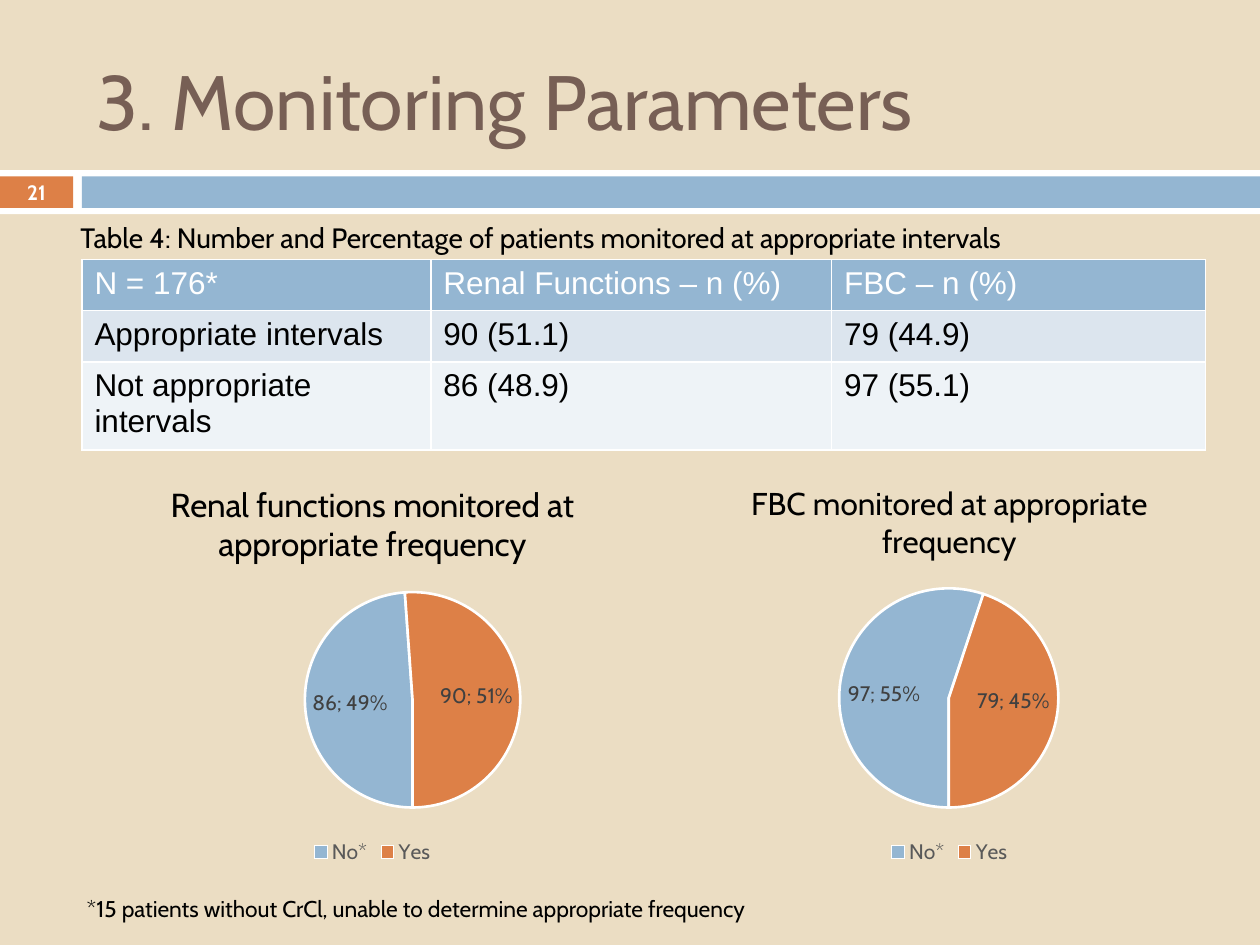
import pptx
import pptx.chart.data
import pptx.dml.color
import pptx.enum.chart
import pptx.enum.shapes
import pptx.enum.text
import pptx.oxml
import pptx.oxml.ns
import pptx.util
from lxml import etree

Inches = pptx.util.Inches
Pt = pptx.util.Pt
Align = pptx.enum.text.PP_ALIGN
Anchor = pptx.enum.text.MSO_ANCHOR
qn = pptx.oxml.ns.qn

BLUE, RUST, WHITE, BLACK = "94B6D2", "DD8047", "FFFFFF", "000000"


def tint(code):
    return pptx.dml.color.RGBColor.from_string(code)


def paint(fill, code):
    fill.solid()
    fill.fore_color.rgb = tint(code)


class Deck:
    """Holds the style and the current slide, and draws each kind of element."""

    face = "Cabin"

    def __init__(self, slide):
        self.slide = slide

    def font(self, font, size, code, face=None, bold=False):
        font.name = face or self.face
        font.size = Pt(size)
        font.bold = bold
        font.color.rgb = tint(code)

    def bar(self, box, code):
        kind = pptx.enum.shapes.MSO_SHAPE.RECTANGLE
        shape = self.slide.shapes.add_shape(kind, *map(Inches, box))
        shape.shadow.inherit = False
        paint(shape.fill, code)
        shape.line.fill.background()

    def text(self, box, words, size, code=BLACK, bold=False,
             align=Align.LEFT, anchor=Anchor.TOP):
        frame = self.slide.shapes.add_textbox(*map(Inches, box)).text_frame
        frame.word_wrap = True
        frame.vertical_anchor = anchor
        para = frame.paragraphs[0]
        para.text = words
        para.alignment = align
        self.font(para.font, size, code, bold=bold)

    def edge(self, cell, widths):
        props = cell._tc.get_or_add_tcPr()
        for spot, (side, width) in enumerate(widths.items()):
            line = etree.Element(qn("a:ln" + side), w=str(Pt(width)))
            fill = etree.SubElement(line, qn("a:solidFill"))
            etree.SubElement(fill, qn("a:srgbClr"), val=WHITE)
            props.insert(spot, line)

    def table(self, box, rows, cols, fills):
        shape = self.slide.shapes.add_table(len(rows), len(cols), *map(Inches, box))
        grid = shape.table
        for col, width in zip(grid.columns, cols):
            col.width = Inches(width)
        for r, row in enumerate(rows):
            for c, words in enumerate(row):
                cell = grid.cell(r, c)
                cell.text = words
                paint(cell.fill, fills[r])
                self.font(cell.text_frame.paragraphs[0].font, 18,
                          BLACK if r else WHITE, "Arial")
                self.edge(cell, {"L": 1, "R": 1, "T": 1, "B": 1})

    def pie(self, box, title, size, values, disc):
        data = pptx.chart.data.CategoryChartData()
        data.categories = ["No*", "Yes"]
        data.add_series(title, values)
        kind = pptx.enum.chart.XL_CHART_TYPE.PIE
        chart = self.slide.shapes.add_chart(kind, *map(Inches, box), data).chart
        self.font(chart.font, 10, BLACK)
        chart.has_title = True
        para = chart.chart_title.text_frame.paragraphs[0]
        para.text = title
        self.font(para.font, size, BLACK)
        chart.has_legend = True
        chart.legend.position = pptx.enum.chart.XL_LEGEND_POSITION.BOTTOM
        chart.legend.include_in_layout = False
        self.font(chart.legend.font, 12, "595959")

        plot = chart.plots[0]
        plot.has_data_labels = True
        labels = plot.data_labels
        labels.show_value = labels.show_percentage = True
        labels.position = pptx.enum.chart.XL_LABEL_POSITION.INSIDE_END
        self.font(labels.font, 12, "404040")
        mark = etree.Element(qn("c:separator"))
        mark.text = "; "
        last = labels._element.find(qn("c:showBubbleSize"))
        if last is None:
            last = labels._element.find(qn("c:showPercent"))
        last.addnext(mark)
        for spot, code in enumerate((BLUE, RUST)):
            style = plot.series[0].points[spot].format
            paint(style.fill, code)
            style.line.color.rgb = tint(WHITE)
            style.line.width = Pt(1.5)
        for old in plot._element.findall(qn("c:firstSliceAng")):
            plot._element.remove(old)
        etree.SubElement(plot._element, qn("c:firstSliceAng"), val="180")
        self.place(chart, box, disc)

    def place(self, chart, box, disc):
        area = chart._chartSpace.chart.plotArea
        for old in area.findall(qn("c:layout")):
            area.remove(old)
        layout = etree.Element(qn("c:layout"))
        area.insert(0, layout)
        manual = etree.SubElement(layout, qn("c:manualLayout"))
        left, top, width, height = box
        x, y, side = disc
        parts = {"layoutTarget": "inner", "xMode": "edge", "yMode": "edge",
                 "x": (x - left) / width, "y": (y - top) / height,
                 "w": side / width, "h": side / height}
        for name, value in parts.items():
            etree.SubElement(manual, qn("c:" + name), val=str(value))


def main():
    show = pptx.Presentation()
    show.slide_width, show.slide_height = Inches(10), Inches(7.5)
    slide = show.slides.add_slide(show.slide_layouts[6])
    paint(slide.background.fill, "EBDDC3")
    deck = Deck(slide)

    deck.bar((0, 1.35, 10, 0.35), WHITE)
    deck.bar((0, 1.4, 0.58, 0.25), RUST)
    deck.bar((0.65, 1.4, 9.35, 0.25), BLUE)
    deck.text((0.67, 0.25, 8.92, 1.08), "3. Monitoring Parameters", 44,
              "775F55", anchor=Anchor.MIDDLE)
    deck.text((0, 1.39, 0.58, 0.27), "21", 11.9, WHITE, True,
              Align.CENTER, Anchor.MIDDLE)

    rows = [("N = 176*", "Renal Functions – n (%)", "FBC – n (%)"),
            ("Appropriate intervals", "90 (51.1)", "79 (44.9)"),
            ("Not appropriate intervals", "86 (48.9)", "97 (55.1)")]
    deck.table((0.65, 2.06, 8.92, 1.22), rows, (2.77, 3.18, 2.97),
               (BLUE, "DCE5EE", "EEF3F7"))
    deck.text((0.54, 1.7, 8.46, 0.37),
              "Table 4: Number and Percentage of patients monitored"
              " at appropriate intervals", 16)

    deck.pie((0.2, 3.66, 5.51, 3.24),
             "Renal functions monitored at appropriate frequency",
             19, (86, 90), (2.42, 4.7, 1.71))
    deck.pie((5.24, 3.66, 4.59, 3.24),
             "FBC monitored at appropriate frequency",
             18, (97, 79), (6.66, 4.67, 1.74))
    deck.text((0.59, 7.05, 8.16, 0.32),
              "*15 patients without CrCl, unable to determine"
              " appropriate frequency", 13)
    show.save("out.pptx")


if __name__ == "__main__":
    main()
